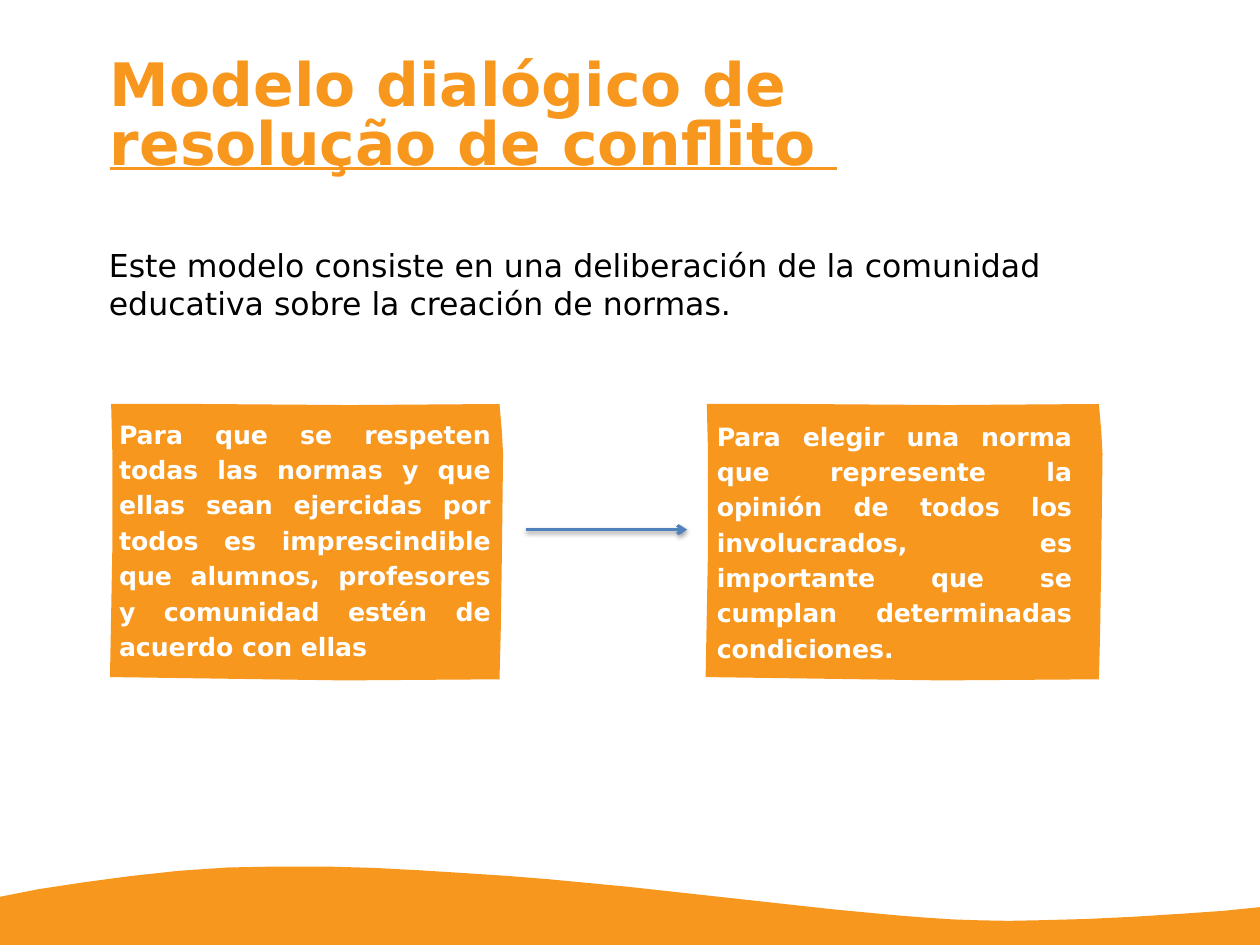
import dataclasses

import lxml.etree
import pptx
import pptx.dml.color
import pptx.enum.shapes
import pptx.enum.text
import pptx.oxml
import pptx.oxml.ns
import pptx.shapes.base
import pptx.slide
import pptx.text.text
import pptx.util

SLIDE_WIDTH = pptx.util.Inches(11.11)
SLIDE_HEIGHT = pptx.util.Inches(8.33)
COLUMNS = 100
ROWS = 100
FONT = "DejaVu Sans"
COLORS = {"orange": "F8971D", "blue": "4F81BD", "black": "000000", "white": "FFFFFF"}

PANEL_OUTLINE = [
    (0.3, 0), (0.6, 17), (0.6, 53), (0, 98.8), (59.5, 100), (99.1, 99.6),
    (99.4, 82.8), (99.7, 55), (100, 18), (99.7, 10), (99.1, 0), (61, 0.4), (23, 0),
]
WAVE_OUTLINE = [
    (0, 94.9), (3.06, 94.1), (6.75, 93.35), (10.44, 92.7), (14.22, 92.15),
    (18.09, 91.8), (21.96, 91.7), (25.83, 91.7), (29.7, 91.85), (33.3, 92.1),
    (36.9, 92.4), (40.32, 92.7), (43.56, 93.05), (49.86, 93.85), (66.24, 96.25),
    (71.01, 96.85), (73.35, 97.1), (75.6, 97.3), (77.85, 97.4), (80.01, 97.45),
    (82.17, 97.4), (86.31, 97.25), (90.18, 97), (93.78, 96.7), (97.02, 96.4),
    (100, 96), (100, 100), (0, 100),
]


@dataclasses.dataclass(frozen=True)
class Area:
    column: float
    row: float
    columns: float
    rows: float


@dataclasses.dataclass(frozen=True)
class Panel:
    area: Area
    text_area: Area
    text: str


TITLE_AREA = Area(8.64, 5.2, 82.7, 13.6)
BODY_AREA = Area(8.64, 26.05, 78.84, 16.5)
PANELS = [
    Panel(
        Area(8.73, 42.75, 31.2, 29.25),
        Area(9.36, 43.8, 29.6, 28),
        "Para que se respeten todas las normas y que ellas sean ejercidas por todos "
        "es imprescindible que alumnos, profesores y comunidad estén de acuerdo con ellas",
    ),
    Panel(
        Area(56, 42.75, 31.5, 29.25),
        Area(56.8, 44, 28.3, 28),
        "Para elegir una norma que represente la opinión de todos los involucrados, "
        "es importante que se cumplan determinadas condiciones.",
    ),
]


def across(columns: float) -> int:
    return round(SLIDE_WIDTH * columns / COLUMNS)


def down(rows: float) -> int:
    return round(SLIDE_HEIGHT * rows / ROWS)


def rgb(name: str) -> pptx.dml.color.RGBColor:
    return pptx.dml.color.RGBColor.from_string(COLORS[name])


def place(shape: pptx.shapes.base.BaseShape, area: Area) -> pptx.text.text.TextFrame:
    shape.left, shape.top = across(area.column), down(area.row)
    shape.width, shape.height = across(area.columns), down(area.rows)
    frame = shape.text_frame
    frame.margin_left = frame.margin_top = frame.margin_right = frame.margin_bottom = 0
    frame.word_wrap = True
    frame.auto_size = pptx.enum.text.MSO_AUTO_SIZE.NONE
    frame.vertical_anchor = pptx.enum.text.MSO_ANCHOR.TOP
    return frame


def write(
    frame: pptx.text.text.TextFrame,
    text: str,
    *,
    size: float,
    color: str,
    bold: bool = False,
    underline: bool = False,
    alignment: pptx.enum.text.PP_ALIGN = pptx.enum.text.PP_ALIGN.LEFT,
    line_spacing: float = 1.0,
    indent: float = 0,
) -> None:
    paragraph = frame.paragraphs[0] if not frame.text else frame.add_paragraph()
    paragraph.alignment = alignment
    paragraph.line_spacing = line_spacing
    paragraph.space_before = pptx.util.Pt(0)
    properties = paragraph._p.get_or_add_pPr()
    properties.set("marL", str(pptx.util.Inches(indent)))
    properties.set("indent", "0")
    lxml.etree.SubElement(properties, pptx.oxml.ns.qn("a:buNone"))
    run = paragraph.add_run()
    run.text = text
    run.font.name = FONT
    run.font.size = pptx.util.Pt(size)
    run.font.bold = bold
    run.font.underline = underline
    run.font.color.rgb = rgb(color)


def draw_outline(
    slide: pptx.slide.Slide, area: Area, outline: list[tuple[float, float]]
) -> None:
    points = [
        (across(area.column + area.columns * x / 100), down(area.row + area.rows * y / 100))
        for x, y in outline
    ]
    builder = slide.shapes.build_freeform(*points[0])
    builder.add_line_segments(points[1:], close=True)
    shape = builder.convert_to_shape()
    shape.shadow.inherit = False
    shape.fill.solid()
    shape.fill.fore_color.rgb = rgb("orange")
    shape.line.fill.background()


def draw_panel(slide: pptx.slide.Slide, panel: Panel) -> None:
    draw_outline(slide, panel.area, PANEL_OUTLINE)
    frame = place(slide.shapes.add_textbox(0, 0, 0, 0), panel.text_area)
    write(
        frame, panel.text, size=16, color="white", bold=True, line_spacing=1.17,
        alignment=pptx.enum.text.PP_ALIGN.JUSTIFY, indent=0.01,
    )


def draw_arrow(slide: pptx.slide.Slide, start: float, end: float, row: float) -> None:
    arrow = slide.shapes.add_connector(
        pptx.enum.shapes.MSO_CONNECTOR.STRAIGHT,
        across(start), down(row), across(end), down(row),
    )
    arrow.line.color.rgb = rgb("blue")
    arrow.line.width = pptx.util.Pt(2)
    line = arrow.line._get_or_add_ln()
    lxml.etree.SubElement(line, pptx.oxml.ns.qn("a:tailEnd"), type="arrow")
    effects = pptx.oxml.parse_xml(
        f'<a:effectLst {pptx.oxml.ns.nsdecls("a")}>'
        f'<a:outerShdw blurRad="{pptx.util.Pt(3.1)}" dist="{pptx.util.Pt(1.6)}" '
        f'dir="5400000" rotWithShape="0"><a:srgbClr val="{COLORS["black"]}">'
        '<a:alpha val="38000"/></a:srgbClr></a:outerShdw></a:effectLst>'
    )
    arrow._element.spPr.append(effects)


def main() -> None:
    presentation = pptx.Presentation()
    presentation.slide_width = SLIDE_WIDTH
    presentation.slide_height = SLIDE_HEIGHT
    slide = presentation.slides.add_slide(presentation.slide_layouts[1])

    title = place(slide.shapes.title, TITLE_AREA)
    title_format = {"size": 38, "color": "orange", "bold": True, "indent": 0.01}
    write(title, "Modelo dialógico de", line_spacing=pptx.util.Pt(44.1), **title_format)
    write(
        title, "resolução de conflito ", underline=True,
        line_spacing=pptx.util.Pt(37.5), **title_format,
    )

    body = place(slide.placeholders[1], BODY_AREA)
    write(
        body,
        "Este modelo consiste en una deliberación de la comunidad educativa "
        "sobre la creación de normas.",
        size=20, color="black",
    )

    draw_outline(slide, Area(0, 0, COLUMNS, ROWS), WAVE_OUTLINE)
    for panel in PANELS:
        draw_panel(slide, panel)
    draw_arrow(slide, 41.76, 54.54, 56.05)
    presentation.save("out.pptx")


if __name__ == "__main__":
    main()
